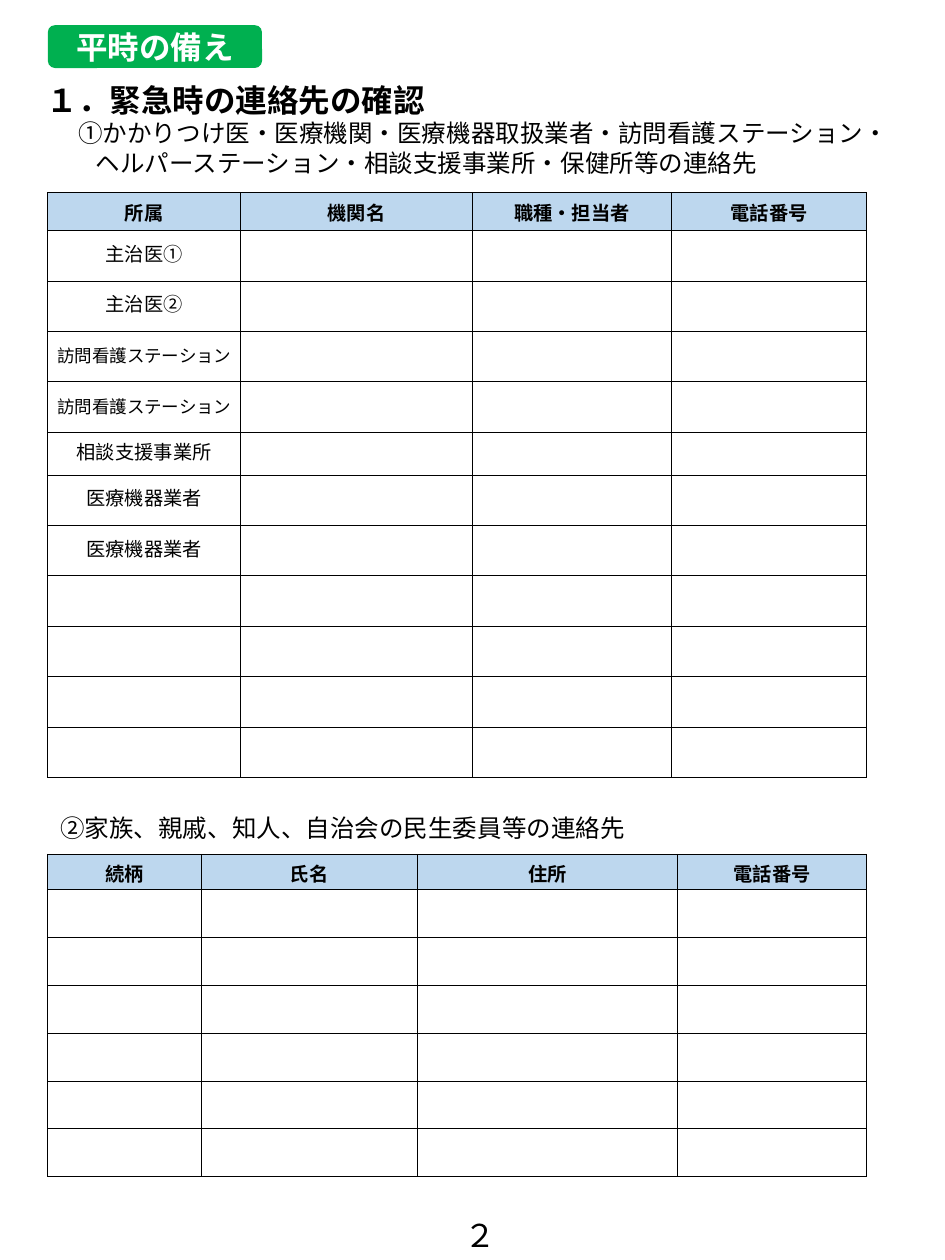
from lxml.etree import SubElement
from pptx import Presentation
from pptx.dml.color import RGBColor
from pptx.enum.shapes import MSO_SHAPE
from pptx.enum.text import MSO_ANCHOR as ANCHOR, MSO_AUTO_SIZE as FIT, PP_ALIGN as ALIGN
from pptx.oxml.ns import qn
from pptx.util import Inches, Pt

COLORS = {"ink": "000000", "paper": "FFFFFF", "badge": "00B050", "header": "BDD7EE"}
FONT = "Noto Sans CJK JP"
BADGE = "平時の備え"
HEADING = [
    ("１．緊急時の連絡先の確認", dict(size=18, bold=True)),
    ("①かかりつけ医・医療機関・医療機器取扱業者・訪問看護ステーション・", dict(size=14, indent=0.25)),
    ("ヘルパーステーション・相談支援事業所・保健所等の連絡先", dict(size=14, indent=0.39)),
]
FAMILY = "②家族、親戚、知人、自治会の民生委員等の連絡先"
PAGE_NUMBER = "２"
TABLES = [
    dict(
        top=1.53,
        headers=["所属", "機関名", "職種・担当者", "電話番号"],
        widths=[1.53, 1.84, 1.58, 1.55],
        heights=[0.3] + [0.4] * 4 + [0.34] + [0.4] * 6,
        labels=[("主治医①", 11), ("主治医②", 11), ("訪問看護ステーション", 10),
                ("訪問看護ステーション", 10), ("相談支援事業所", 11),
                ("医療機器業者", 11), ("医療機器業者", 11)],
    ),
    dict(
        top=6.78,
        headers=["続柄", "氏名", "住所", "電話番号"],
        widths=[1.22, 1.71, 2.07, 1.5],
        heights=[0.28] + [0.38] * 6,
        labels=[],
    ),
]
LEFT = 0.38


def rgb(name):
    return RGBColor.from_string(COLORS[name])


def write(para, text, size=11, bold=False, color="ink", font=FONT, align=ALIGN.LEFT,
          indent=0, spacing=None):
    """Put one formatted span of text into a paragraph."""
    para.alignment = align
    if spacing:
        para.line_spacing = Pt(spacing)
    if indent:
        para._p.get_or_add_pPr().set("marL", str(Inches(indent)))
    span = para.add_run()
    span.text = text
    span.font.size, span.font.bold, span.font.name = Pt(size), bold, font
    span.font.color.rgb = rgb(color)
    SubElement(span._r.get_or_add_rPr(), qn("a:ea"), typeface=FONT)


def add_text(page, text, left, top, width, height, **style):
    box = page.shapes.add_textbox(*map(Inches, (left, top, width, height)))
    box.text_frame.word_wrap = True
    write(box.text_frame.paragraphs[0], text, **style)


def add_heading(page):
    title = page.shapes.title
    title.left, title.top, title.width, title.height = map(Inches, (0.27, 0.59, 6.93, 0.94))
    frame = title.text_frame
    frame.word_wrap, frame.auto_size = True, FIT.NONE
    frame.vertical_anchor = ANCHOR.TOP
    for number, (text, style) in enumerate(HEADING):
        para = frame.add_paragraph() if number else frame.paragraphs[0]
        write(para, text, **style)


def add_badge(page):
    badge = page.shapes.add_shape(MSO_SHAPE.ROUNDED_RECTANGLE, *map(Inches, (LEFT, 0.2, 1.7, 0.34)))
    badge.shadow.inherit = False
    badge.fill.solid()
    badge.fill.fore_color.rgb = rgb("badge")
    badge.line.fill.background()
    badge.text_frame.vertical_anchor = ANCHOR.MIDDLE
    write(badge.text_frame.paragraphs[0], BADGE, size=18, bold=True, color="paper", align=ALIGN.CENTER)


def format_cell(cell, fill=None):
    cell.vertical_anchor = ANCHOR.MIDDLE
    cell.margin_left = cell.margin_right = cell.margin_top = Inches(0.01)
    cell.margin_bottom = 0
    for side in ("lnL", "lnR", "lnT", "lnB"):
        border = SubElement(cell._tc.get_or_add_tcPr(), qn(f"a:{side}"), w=str(Pt(0.5)))
        SubElement(SubElement(border, qn("a:solidFill")), qn("a:srgbClr"), val=COLORS["ink"])
    if fill:
        cell.fill.solid()
        cell.fill.fore_color.rgb = rgb(fill)
    else:
        cell.fill.background()


def add_contacts(page, top, headers, widths, heights, labels):
    table = page.shapes.add_table(
        len(heights), len(widths), Inches(LEFT), Inches(top),
        Inches(sum(widths)), Inches(sum(heights))).table
    for column, width in zip(table.columns, widths):
        column.width = Inches(width)
    for number, height in enumerate(heights):
        table.rows[number].height = Inches(height)
        for cell in table.rows[number].cells:
            format_cell(cell, None if number else "header")
    for column, text in enumerate(headers):
        write(table.cell(0, column).text_frame.paragraphs[0], text, bold=True, align=ALIGN.CENTER)
    for row, (text, size) in enumerate(labels, 1):
        write(table.cell(row, 0).text_frame.paragraphs[0], text, size=size,
              align=ALIGN.CENTER, spacing=12)


def main():
    deck = Presentation()
    deck.slide_width, deck.slide_height = Inches(7.5), Inches(10)
    page = deck.slides.add_slide(deck.slide_layouts[5])
    add_badge(page)
    add_heading(page)
    for contacts in TABLES:
        add_contacts(page, **contacts)
    add_text(page, FAMILY, LEFT, 6.4, 5.44, 0.34, size=14)
    add_text(page, PAGE_NUMBER, 3.59, 9.6, 0.45, 0.4, size=18, font="Calibri", align=ALIGN.CENTER)
    deck.save("out.pptx")


if __name__ == "__main__":
    main()
